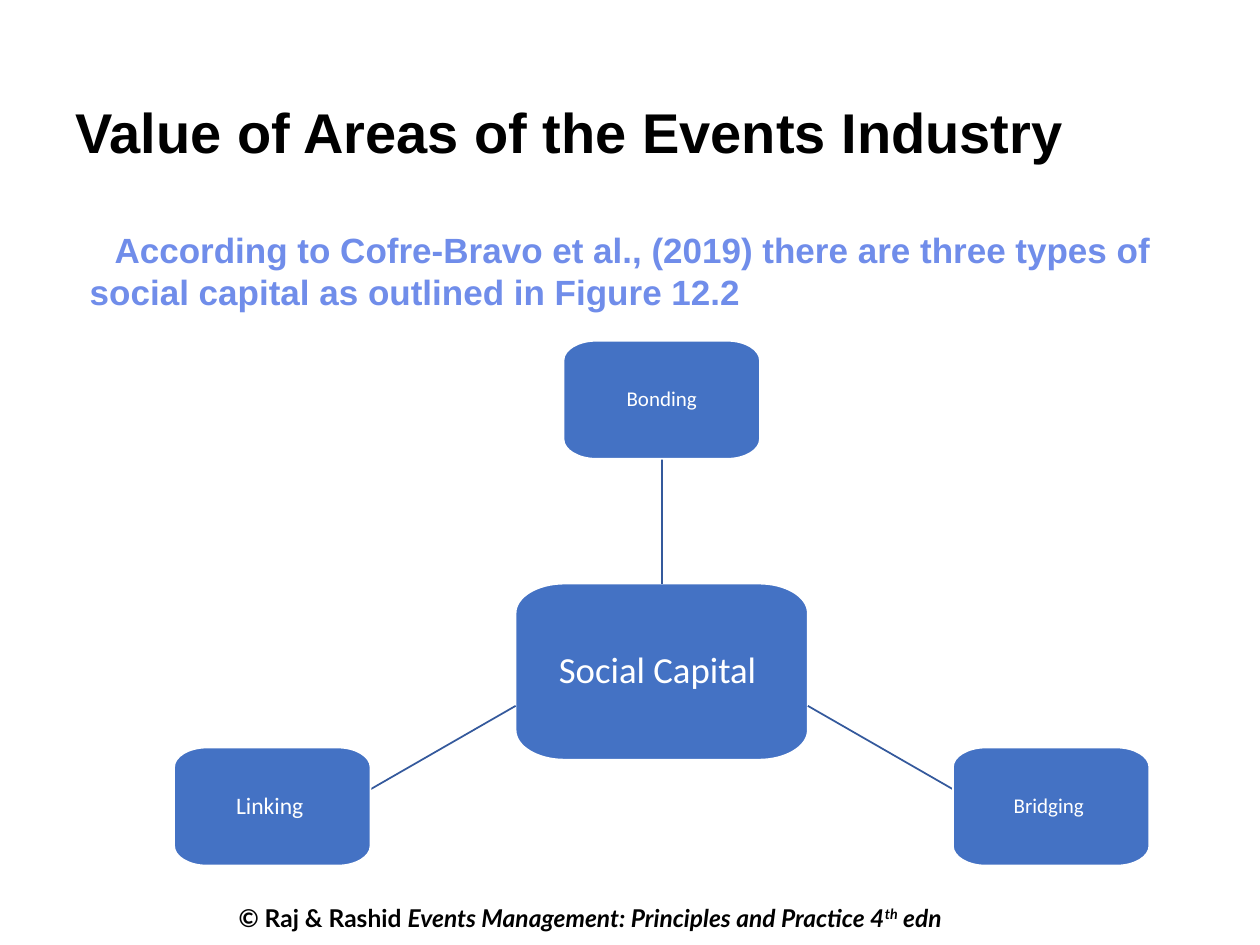
from lxml import etree
from pptx import Presentation
from pptx.dml.color import RGBColor
from pptx.enum import shapes as sh, text as tx
from pptx.oxml import ns
from pptx.util import Cm, Pt

BLUE, LINK_BLUE, WHITE, BLACK, LILAC = "4472C4", "34599C", "FFFFFF", "000000", "708DEA"
ARC = 0.55  # how far a control point reaches towards the corner


def colour(hex_string):
    return RGBColor.from_string(hex_string)


def style(run, font, size, hex_string, bold=False, italic=False):
    run.font.name = font
    run.font.size = Pt(size)
    run.font.color.rgb = colour(hex_string)
    run.font.bold = bold
    run.font.italic = italic


def add_text_area(slide, left, top, width, height, wrap=True):
    area = slide.shapes.add_textbox(Cm(left), Cm(top), Cm(width), Cm(height))
    area.text_frame.word_wrap = wrap
    return area.text_frame


def add_title(slide, left, top, width, height):
    title = add_text_area(slide, left, top, width, height).paragraphs[0]
    title.text = "Value of Areas of the Events Industry"
    style(title.runs[0], "Arial", 32, BLACK, bold=True)


def add_intro(slide, left, top, width, height):
    frame = add_text_area(slide, left, top, width, height)
    frame.vertical_anchor = tx.MSO_ANCHOR.MIDDLE
    intro = frame.paragraphs[0]
    intro.text = ("According to Cofre-Bravo et al., (2019) there are three types of "
                  "social capital as outlined in Figure 12.2")
    intro._p.get_or_add_pPr().set("indent", str(Cm(0.5)))
    style(intro.runs[0], "Arial", 20, LILAC, bold=True)


def add_credit(slide, left, top, width, height):
    credit = add_text_area(slide, left, top, width, height, wrap=False).paragraphs[0]
    for words, italic, raised in (
            ("© Raj & Rashid ", False, False),
            ("Events Management: Principles and Practice 4", True, False),
            ("th", True, True),
            (" edn", True, False)):
        run = credit.add_run()
        run.text = words
        style(run, "Lato", 14, BLACK, bold=True, italic=italic)
        if raised:
            run._r.get_or_add_rPr().set("baseline", "30000")


def round_corners(outline):
    """Turns every other line of an eight-point outline into a quarter ellipse."""
    path = outline._element.find(".//" + ns.qn("a:path"))
    steps = path.findall("*")[:8]
    points = [(int(pt.get("x")), int(pt.get("y"))) for pt in path.iter(ns.qn("a:pt"))]
    for i in range(1, 8, 2):
        (x1, y1), (x2, y2) = points[i - 1], points[i]
        corner_x, corner_y = (x1, y2) if i in (1, 5) else (x2, y1)
        curve = etree.Element(ns.qn("a:cubicBezTo"))
        for x, y in ((x1 + ARC * (corner_x - x1), y1 + ARC * (corner_y - y1)),
                     (x2 + ARC * (corner_x - x2), y2 + ARC * (corner_y - y2)),
                     (x2, y2)):
            etree.SubElement(curve, ns.qn("a:pt"), x=str(round(x)), y=str(round(y)))
        path.replace(steps[i], curve)


def add_rounded_box(slide, x, y, width, height):
    """Draws a box centred on x, y; each corner takes a sixth of its sides."""
    outer_x, outer_y = width / 2, height / 2
    inner_x, inner_y = width / 3, height / 3
    start, *rest = [(Cm(x + dx), Cm(y + dy)) for dx, dy in (
        (-outer_x, -inner_y), (-inner_x, -outer_y), (inner_x, -outer_y), (outer_x, -inner_y),
        (outer_x, inner_y), (inner_x, outer_y), (-inner_x, outer_y), (-outer_x, inner_y))]
    builder = slide.shapes.build_freeform(*start)
    builder.add_line_segments(rest, close=True)
    box = builder.convert_to_shape()
    round_corners(box)
    return box


def add_node(slide, label, x, y, width, height, size, inset, space_after):
    node = add_rounded_box(slide, x, y, width, height)
    node.shadow.inherit = False
    node.fill.solid()
    node.fill.fore_color.rgb = colour(BLUE)
    node.line.color.rgb = colour(WHITE)
    node.line.width = Pt(1)
    frame = node.text_frame
    frame.word_wrap = True
    frame.vertical_anchor = tx.MSO_ANCHOR.MIDDLE
    frame.margin_left = frame.margin_right = Cm(inset)
    frame.margin_top = frame.margin_bottom = Cm(inset)
    paragraph = frame.paragraphs[0]
    paragraph.text = label
    paragraph.alignment = tx.PP_ALIGN.CENTER
    paragraph.line_spacing = 0.9
    paragraph.space_after = Pt(space_after)
    style(paragraph.runs[0], "Calibri", size, WHITE)


def add_link(slide, x1, y1, x2, y2):
    link = slide.shapes.add_connector(
        sh.MSO_CONNECTOR.STRAIGHT, Cm(x1), Cm(y1), Cm(x2), Cm(y2))
    link.line.color.rgb = colour(LINK_BLUE)
    link.line.width = Pt(1)
    etree.SubElement(link._element.spPr, ns.qn("a:effectLst"))


def add_capital_diagram(slide, x, y):
    """Places the hub on x, y with its three types around it."""
    hub_width, hub_height = 5.89, 3.55
    type_width, type_height = 3.96, 2.38
    rise, spread, drop = 5.48, 7.85, 2.72
    add_node(slide, "Social Capital ", x, y, hub_width, hub_height, 21, 0.28, 9)

    add_link(slide, x, y - hub_height / 2, x, y - rise + type_height / 2)
    add_node(slide, "Bonding", x, y - rise, type_width, type_height, 12, 0.18, 5)

    for side, label, size, space_after in ((1, "Bridging ", 12, 5), (-1, "Linking ", 13.5, 6)):
        add_link(slide, x + side * hub_width / 2, y + 0.69,
                 x + side * (spread - type_width / 2), y + 2.37)
        add_node(slide, label, x + side * spread, y + drop,
                 type_width, type_height, size, 0.18, space_after)


def main():
    deck = Presentation()
    deck.slide_width, deck.slide_height = Cm(25.4), Cm(19.05)
    slide = deck.slides.add_slide(deck.slide_layouts[6])
    add_credit(slide, 4.56, 18.07, 17.7, 0.86)
    add_title(slide, 1.27, 1.85, 22.86, 2.67)
    add_intro(slide, 1.56, 4.47, 22.58, 1.96)
    add_capital_diagram(slide, 13.34, 13.54)
    deck.save("out.pptx")


if __name__ == "__main__":
    main()
